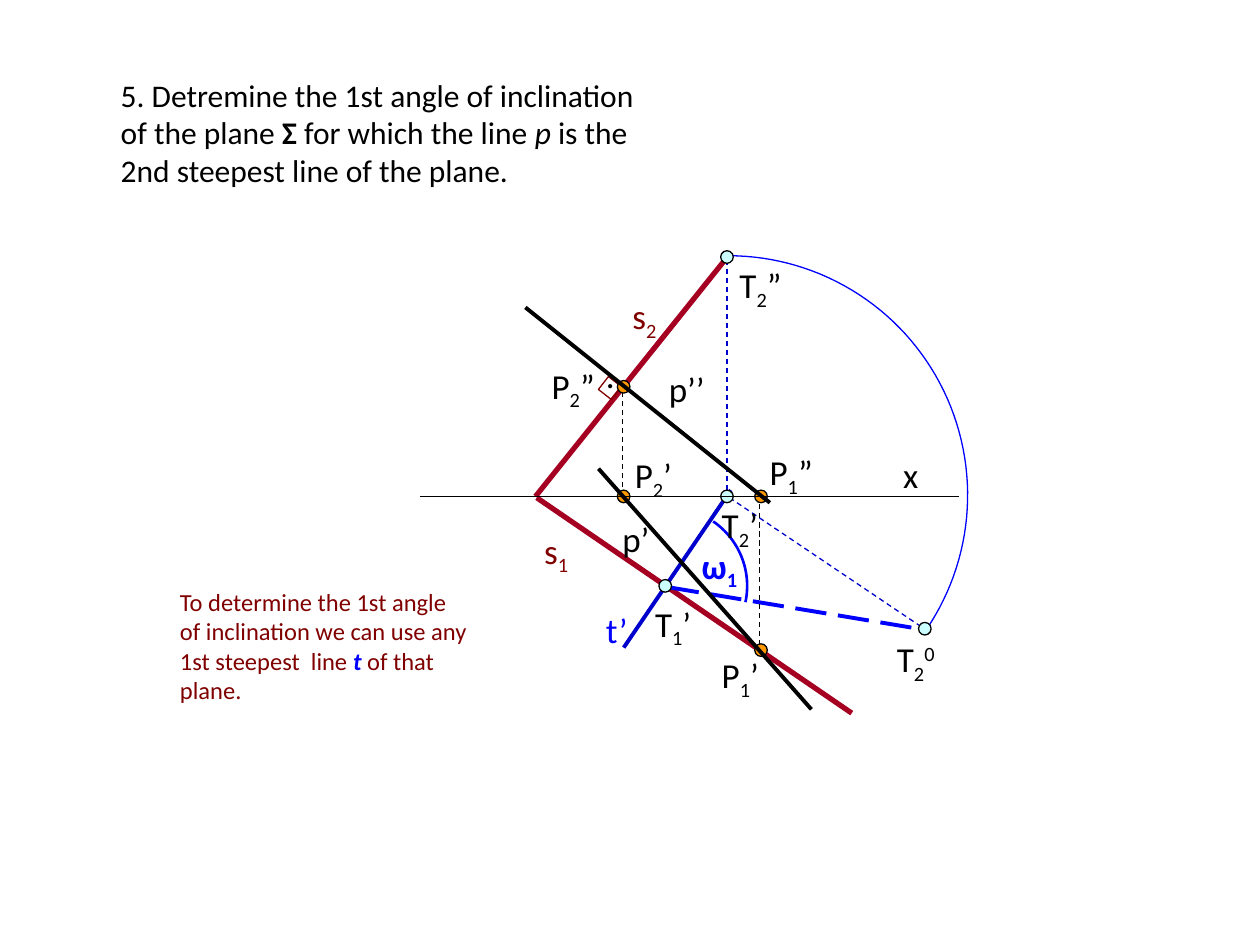
from math import cos, sin, radians
from lxml.etree import SubElement
from pptx import Presentation
from pptx.dml.color import RGBColor as RGB
from pptx.enum.dml import MSO_LINE as Dash
from pptx.enum.shapes import MSO_CONNECTOR as Conn, MSO_SHAPE as Shape
from pptx.oxml.ns import qn
from pptx.util import Inches as In, Pt

BLACK = RGB(0x00, 0x00, 0x00)
BLUE = RGB(0x00, 0x00, 0xFF)
NAVY = RGB(0x00, 0x00, 0xCC)
RED = RGB(0xA5, 0x00, 0x21)
MAROON = RGB(0x80, 0x00, 0x00)
ORANGE = RGB(0xFF, 0x99, 0x00)
CYAN = RGB(0xCC, 0xFF, 0xFF)
FONT = "Calibri"
DOT, ROW = 0.1, 0.44
AXIS = 3.94

# Paragraphs: left, top, width, height, size, runs (text, colour, style)
NOTES = [
    (0.86, 0.55, 4.45, 1.01, 18, [
        ("5. Detremine the 1st angle of inclination of the plane ", BLACK, ""),
        ("Σ", BLACK, "b"), (" for which the line ", BLACK, ""),
        ("p", BLACK, "i"), (" is the 2nd steepest line of the plane.", BLACK, "")]),
    (1.33, 4.61, 2.51, 1.04, 14, [
        ("To determine the 1st angle of inclination we can use any "
         "1st steepest  line ", MAROON, ""),
        ("t ", BLUE, "bi"), ("of that plane.", MAROON, "")]),
]

# Arcs: centre x, centre y, radius, start and end angle, colour, weight
ARCS = [
    (5.78, 3.93, 1.9, -90, 34.3, BLUE, 0.75),
    (5.31, 4.65, 0.62, -55.6, 12, BLUE, 1.5),
]

# Lines: x1, y1, x2, y2, colour, weight, dash
LINES = [
    (4.26, 3.95, 6.76, 5.66, RED, 3, None),
    (4.25, AXIS, 5.78, 2.03, RED, 3, None),
    (4.95, 5.14, 5.8, 3.89, NAVY, 2.25, None),
    (5.79, 3.95, 7.35, 5, NAVY, 0.75, Dash.DASH),
    (5.3, 4.66, 7.35, 5, BLUE, 2.25, Dash.LONG_DASH),
    (4.94, AXIS, 4.94, 3.06, BLACK, 0.75, Dash.DASH),
    (6.03, 5.19, 6.03, 3.95, BLACK, 0.75, Dash.DASH),
    (5.77, 2.06, 5.77, 3.96, NAVY, 0.75, Dash.DASH),
]
FRONT = [
    (3.33, AXIS, 7.61, AXIS, BLACK, 0.75, None),
    (4.17, 2.44, 6.11, 3.99, BLACK, 2.25, None),
    (4.75, 3.72, 6.44, 5.63, BLACK, 2.25, None),
]

# Points by fill: centre x, centre y
DOTS = {
    ORANGE: [(4.95, AXIS), (6.04, 5.16), (4.95, 3.07), (6.04, AXIS)],
    CYAN: [(5.28, 4.65), (5.77, AXIS), (7.34, 4.99), (5.77, 2.04)],
}

# Labels: left, top, width, letter, subscript, mark, colour
LABELS = [
    (4.22, 4.15, 0.59, "s", "1", "", MAROON),
    (4.92, 2.29, 0.5, "s", "2", "", MAROON),
    (4.71, 2.76, 0.29, ".", "", "", BLACK),
    (4.71, 4.78, 0.51, "t’", "", "", BLUE),
    (5.47, 4.27, 0.51, "ω", "1", "", BLUE),
    (5.63, 5.14, 0.53, "P", "1", "’", BLACK),
    (6.01, 3.53, 0.58, "P", "1", "”", BLACK),
    (4.94, 3.55, 0.53, "P", "2", "’", BLACK),
    (4.28, 2.84, 0.56, "P", "2", "”", BLACK),
    (5.1, 4.73, 0.59, "T", "1", "’", BLACK),
    (5.63, 3.95, 0.64, "T", "2", "’", BLACK),
    (7.02, 5.01, 0.54, "T", "2", "0", BLACK),
    (5.77, 2.04, 0.62, "T", "2", "”", BLACK),
    (5.21, 2.87, 0.58, "p’’", "", "", BLACK),
    (4.84, 4.06, 0.85, "p’", "", "", BLACK),
    (7.07, 3.55, 0.38, "x", "", "", BLACK),
]

deck = Presentation()
deck.slide_width, deck.slide_height = In(10), In(7.5)
shapes = deck.slides.add_slide(deck.slide_layouts[6]).shapes


def pen(item, color, weight):
    item.line.color.rgb = color
    item.line.width = Pt(weight)


def add_text(x, y, w, h, size, runs):
    frame = shapes.add_textbox(In(x), In(y), In(w), In(h)).text_frame
    frame.word_wrap = True
    for text, color, style, *base in runs:
        run = frame.paragraphs[0].add_run()
        run.text = text
        font = run.font
        font.name, font.size = FONT, Pt(size)
        font.color.rgb = color
        font.bold, font.italic = "b" in style, "i" in style
        if base and base[0]:
            run._r.get_or_add_rPr().set("baseline", str(base[0] * 1000))


def add_arc(cx, cy, r, start, end, color, weight, steps=60):
    turns = [radians(start + (end - start) * i / steps) for i in range(steps + 1)]
    pts = [(In(cx + r * cos(a)), In(cy + r * sin(a))) for a in turns]
    pen_path = shapes.build_freeform(*pts[0])
    pen_path.add_line_segments(pts[1:], close=False)
    arc = pen_path.convert_to_shape()
    arc.shadow.inherit = False
    arc.fill.background()
    pen(arc, color, weight)


def add_line(x1, y1, x2, y2, color, weight, dash):
    line = shapes.add_connector(Conn.STRAIGHT, In(x1), In(y1), In(x2), In(y2))
    pen(line, color, weight)
    if dash:
        line.line.dash_style = dash
    SubElement(line._element.spPr, qn("a:effectLst"))


def add_mark(kind, cx, cy, size, fill, color):
    mark = shapes.add_shape(kind, In(cx - size / 2), In(cy - size / 2),
                            In(size), In(size))
    mark.shadow.inherit = False
    if fill is None:
        mark.fill.background()
    else:
        mark.fill.solid()
        mark.fill.fore_color.rgb = fill
    pen(mark, color, 0.75)
    return mark


# Arcs and notes
for arc in ARCS:
    add_arc(*arc)
for note in NOTES:
    add_text(*note)

# Traces, projectors and the right-angle mark
for line in LINES:
    add_line(*line)
add_mark(Shape.RECTANGLE, 4.84, 3.08, 0.13, None, MAROON).rotation = 37.9

# Points, then the axis and the line p over them
for fill, spots in DOTS.items():
    for cx, cy in spots:
        add_mark(Shape.OVAL, cx, cy, DOT, fill, BLACK)
for line in FRONT:
    add_line(*line)

# Labels
for x, y, w, letter, sub, mark, color in LABELS:
    style = "b" if letter == "ω" else ""
    parts = [(letter, 0), (sub, -25), (mark, 30 if mark == "0" else 0)]
    add_text(x, y, w, ROW, 20,
             [(text, color, style, base) for text, base in parts if text])

deck.save("out.pptx")
